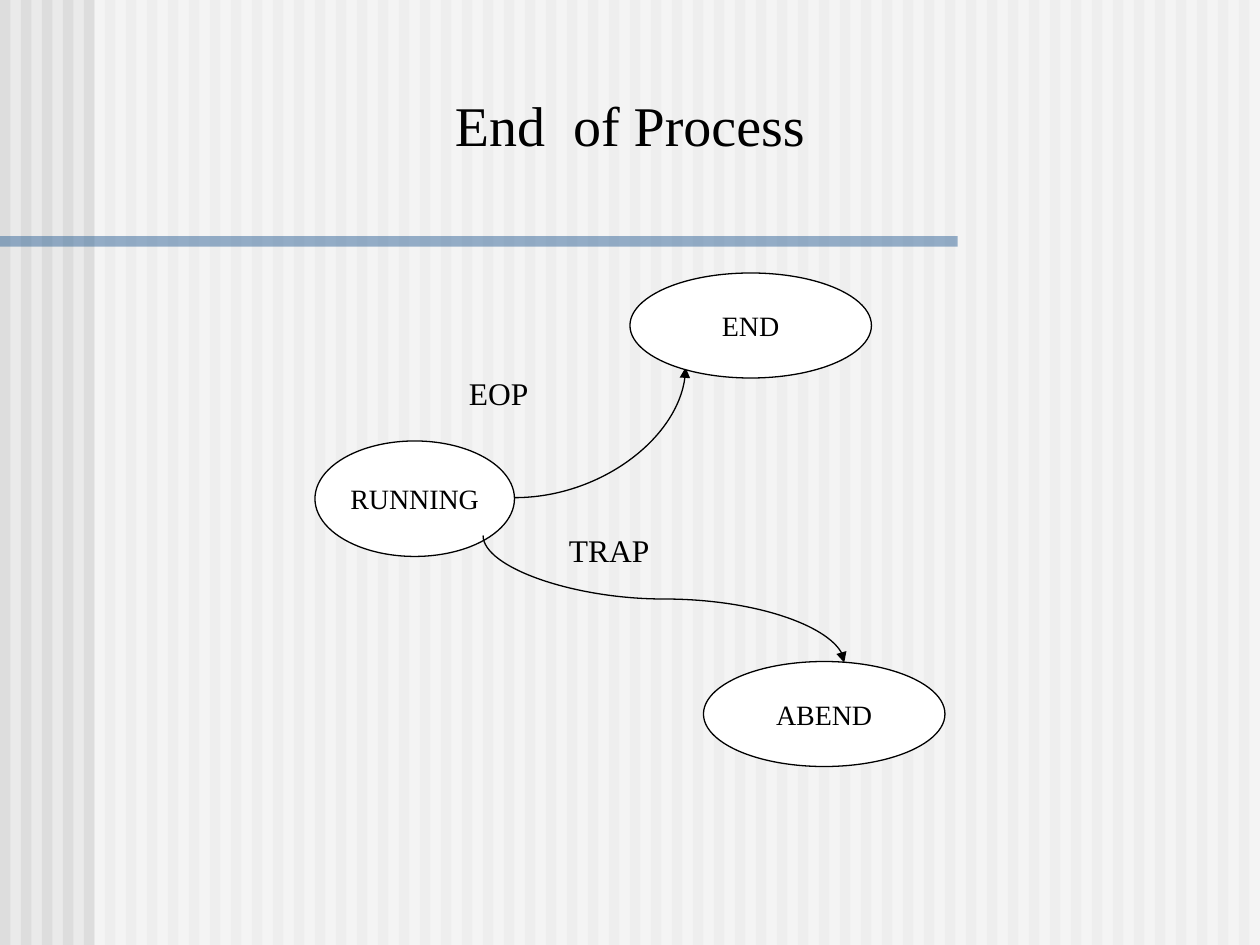
from collections import namedtuple
from dataclasses import dataclass

from lxml.etree import SubElement
from pptx import Presentation
from pptx.dml.color import RGBColor
from pptx.enum.shapes import MSO_CONNECTOR as Connector, MSO_SHAPE as Shape
from pptx.enum.text import MSO_ANCHOR as Anchor, PP_ALIGN as Align
from pptx.oxml.ns import qn
from pptx.util import Pt

SCALE = 7620
Box = namedtuple("Box", "left top width height")


@dataclass(frozen=True)
class Theme:
    """Colours, font and type sizes of the slide."""
    ground: str = "EAEAEA"
    stripe: str = "DDDDDD"
    veil: str = "FFFFFF"
    rule: str = "336699"
    state: str = "FFFFFF"
    ink: str = "000000"
    font: str = "Times New Roman"
    title: int = 32
    label: int = 18
    name: int = 16
    line: float = 0.75


THEME = Theme()


def emu(*lengths):
    """Turn px lengths into EMU."""
    return [round(length * SCALE) for length in lengths]


def paint(fill, colour, alpha=None):
    """Give a fill one colour, see-through if alpha is set in percent."""
    fill.solid()
    fill.fore_color.rgb = RGBColor.from_string(colour)
    if alpha is not None:
        tint = fill._xPr.find(qn("a:solidFill"))[0]
        SubElement(tint, qn("a:alpha")).set("val", str(alpha * 1000))


def add_filled(shapes, kind, box, colour, alpha=None):
    """Add a filled preset shape without outline or shadow."""
    shape = shapes.add_shape(kind, *emu(*box))
    shape.shadow.inherit = False
    paint(shape.fill, colour, alpha)
    shape.line.fill.background()
    return shape


def write(frame, text, size, align):
    """Set one styled paragraph in a text frame."""
    frame.text = text
    para = frame.paragraphs[0]
    para.alignment = align
    font = para.runs[0].font
    font.name, font.size = THEME.font, Pt(size)
    font.color.rgb = RGBColor.from_string(THEME.ink)


def draw_outline(line):
    """Style a thin ink line."""
    paint(line.fill, THEME.ink)
    line.width = Pt(THEME.line)


def add_backdrop(page, box):
    """Draw the striped ground, the pale veil and the title rule."""
    paint(page.background.fill, THEME.ground)
    group = page.shapes.add_group_shape().shapes
    pitch, margin = 20, 90
    for left in range(box.left, box.left + box.width, pitch):
        add_filled(group, Shape.RECTANGLE,
                   Box(left, box.top, pitch // 2, box.height), THEME.stripe)
    veil = Box(box.left + margin, box.top, box.width - margin, box.height)
    add_filled(group, Shape.RECTANGLE, veil, THEME.veil, 50)
    rule = Box(box.left, box.top + 225, 912, 10)
    add_filled(group, Shape.RECTANGLE, rule, THEME.rule, 50)


def add_text(page, box, text, size, align=Align.CENTER):
    """Add a wrapped line of text."""
    frame = page.shapes.add_textbox(*emu(*box)).text_frame
    frame.word_wrap = True
    write(frame, text, size, align)


def add_state(page, box, name):
    """Draw a process state as a named ellipse."""
    shape = add_filled(page.shapes, Shape.OVAL, box, THEME.state)
    draw_outline(shape.line)
    frame = shape.text_frame
    frame.word_wrap = False
    frame.vertical_anchor = Anchor.MIDDLE
    write(frame, name, THEME.name, Align.CENTER)


def add_curve(page, start, end, preset):
    """Draw a curved arrow between two points."""
    curve = page.shapes.add_connector(Connector.CURVE, *emu(*start, *end))
    draw_outline(curve.line)
    properties = curve._element.spPr
    properties.find(qn("a:prstGeom")).set("prst", preset)
    SubElement(properties.find(qn("a:ln")), qn("a:tailEnd")).set("type", "triangle")
    SubElement(properties, qn("a:effectLst"))
    return curve


def add_upright_curve(page, start, end):
    """Draw an S-shaped arrow that leaves and arrives vertically."""
    middle_x, middle_y = (start[0] + end[0]) / 2, (start[1] + end[1]) / 2
    half_width, half_height = (end[1] - start[1]) / 2, (end[0] - start[0]) / 2
    curve = add_curve(page, (middle_x + half_width, middle_y - half_height),
                      (middle_x - half_width, middle_y + half_height), "curvedConnector3")
    curve._element.spPr.find(qn("a:xfrm")).set("rot", str(270 * 60000))


def add_diagram(page, box):
    """Draw the states with their transitions, relative to the box."""
    def at(left, top):
        return box.left + left, box.top + top

    add_state(page, Box(*at(0, 160), 190, 110), "RUNNING")
    add_curve(page, at(190, 214), at(353, 90), "curvedConnector2")
    add_state(page, Box(*at(300, 0), 230, 100), "END")
    add_text(page, Box(*at(60, 90), 230, 48), "EOP", THEME.label)
    add_state(page, Box(*at(370, 370), 230, 100), "ABEND")
    add_text(page, Box(*at(230, 240), 230, 48), "TRAP", THEME.label, Align.LEFT)
    add_upright_curve(page, at(160, 250), at(504, 371))


def main():
    """Build and save the slide."""
    deck = Presentation()
    deck.slide_width, deck.slide_height = emu(1200, 900)
    page = deck.slides.add_slide(deck.slide_layouts[6])
    add_backdrop(page, Box(0, 0, 1200, 900))
    add_text(page, Box(340, 80, 520, 76), "End  of Process", THEME.title)
    add_diagram(page, Box(300, 260, 600, 470))
    deck.save("out.pptx")


if __name__ == "__main__":
    main()
